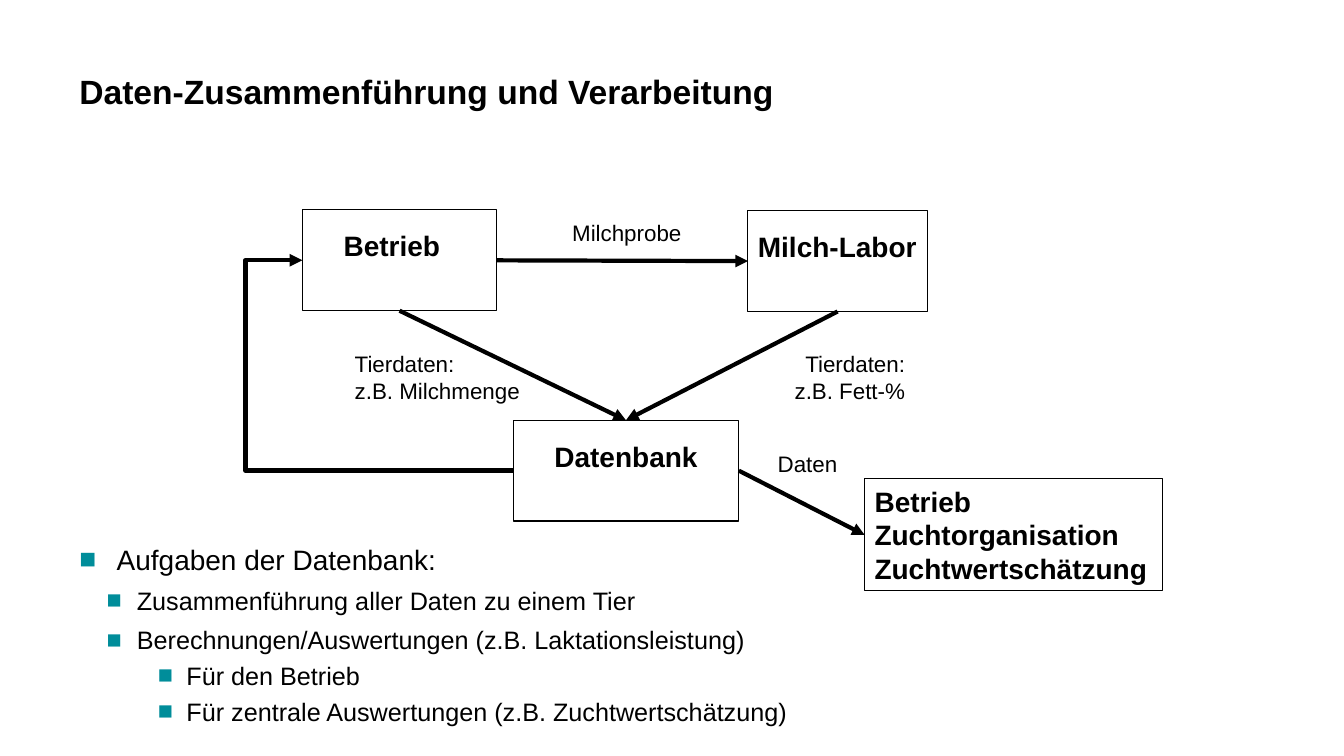
from lxml.etree import SubElement
from pptx import Presentation
from pptx.dml.color import RGBColor
from pptx.enum.shapes import MSO_CONNECTOR as Route, MSO_SHAPE as Shape
from pptx.enum.text import MSO_ANCHOR as Anchor, PP_ALIGN as Align
from pptx.oxml.ns import qn
from pptx.util import Cm, Pt

BLACK = RGBColor(0x00, 0x00, 0x00)
TEAL = RGBColor(0x00, 0x8D, 0x9A)
FONT = "Arial"
TOP, LEFT, BOTTOM, RIGHT = range(4)
BULLET_LEVELS = [
    (0.94, -0.94, 20, 0),
    (1.45, -0.76, 18, 6.5),
    (2.7, -0.72, 18, 4),
]


def style_font(paragraph, size, bold=False):
    font = paragraph.font
    font.name, font.size, font.bold = FONT, Pt(size), bold
    font.color.rgb = BLACK


def write_lines(frame, lines, size, bold=False, align=Align.LEFT):
    frame.text = "\n".join(lines)
    for paragraph in frame.paragraphs:
        paragraph.alignment = align
        style_font(paragraph, size, bold)


def add_station(slide, lines, x, y, width, height=2.54, inset_left=0.25, inset_top=0.48):
    station = slide.shapes.add_shape(Shape.RECTANGLE, Cm(x), Cm(y), Cm(width), Cm(height))
    station.shadow.inherit = False
    station.fill.background()
    station.line.color.rgb = BLACK
    station.line.width = Pt(0.75)
    frame = station.text_frame
    frame.word_wrap = True
    frame.vertical_anchor = Anchor.TOP
    frame.margin_left, frame.margin_right = Cm(inset_left), 0
    frame.margin_top = Cm(inset_top)
    write_lines(frame, lines, 20, bold=True)
    return station


def add_label(slide, lines, x, y, width, height=0.94, align=Align.LEFT):
    label = slide.shapes.add_textbox(Cm(x), Cm(y), Cm(width), Cm(height))
    label.text_frame.word_wrap = False
    write_lines(label.text_frame, lines, 16, align=align)


def add_flow(slide, source, source_side, target, target_side, route=Route.STRAIGHT):
    flow = slide.shapes.add_connector(route, 0, 0, 0, 0)
    flow.begin_connect(source, source_side)
    flow.end_connect(target, target_side)
    flow.line.color.rgb = BLACK
    flow.line.width = Pt(3)
    SubElement(flow.line._get_or_add_ln(), qn("a:tailEnd"), type="triangle")
    properties = flow._element.spPr
    SubElement(properties, qn("a:effectLst"))
    return flow


def bend_outwards(flow, ratio):
    geometry = flow._element.spPr.find(qn("a:prstGeom"))
    guides = geometry.find(qn("a:avLst"))
    if guides is None:
        guides = SubElement(geometry, qn("a:avLst"))
    SubElement(guides, qn("a:gd"), name="adj1", fmla=f"val {round(ratio * 100000)}")


def add_bullet(paragraph, indent, hanging):
    properties = paragraph._p.get_or_add_pPr()
    properties.set("marL", str(Cm(indent)))
    properties.set("indent", str(Cm(hanging)))
    colour = SubElement(properties, qn("a:buClr"))
    SubElement(colour, qn("a:srgbClr"), val=str(TEAL))
    SubElement(properties, qn("a:buFont"), typeface=FONT)
    SubElement(properties, qn("a:buChar"), char="■")


def add_tasks(slide, tasks):
    frame = slide.shapes.add_textbox(Cm(1.75), Cm(13.54), Cm(25.35), Cm(4.65)).text_frame
    frame.word_wrap = True
    frame.text = "\n".join(task for _, task in tasks)
    for paragraph, (level, _) in zip(frame.paragraphs, tasks):
        indent, hanging, size, space = BULLET_LEVELS[level]
        paragraph.level = level
        paragraph.space_before = Pt(space)
        add_bullet(paragraph, indent, hanging)
        style_font(paragraph, size)


def add_title(slide, title):
    frame = slide.shapes.add_textbox(Cm(1.75), Cm(1.6), Cm(23.19), Cm(1.4)).text_frame
    frame.word_wrap = True
    frame.vertical_anchor = Anchor.MIDDLE
    write_lines(frame, [title], 24, bold=True)


def main():
    presentation = Presentation()
    presentation.slide_width, presentation.slide_height = Cm(33.87), Cm(19.05)
    slide = presentation.slides.add_slide(presentation.slide_layouts[6])

    add_title(slide, "Daten-Zusammenführung und Verarbeitung")
    add_tasks(slide, [
        (0, "Aufgaben der Datenbank:"),
        (1, "Zusammenführung aller Daten zu einem Tier"),
        (1, "Berechnungen/Auswertungen (z.B. Laktationsleistung)"),
        (2, "Für den Betrieb"),
        (2, "Für zentrale Auswertungen (z.B. Zuchtwertschätzung)"),
    ])

    farm = add_station(slide, ["Betrieb"], 7.62, 5.29, 4.9, inset_left=1.04)
    laboratory = add_station(slide, ["Milch-Labor"], 18.85, 5.31, 4.52)
    database = add_station(slide, ["Datenbank"], 12.93, 10.59, 5.69, inset_left=1.04)
    recipients = add_station(
        slide, ["Betrieb", "Zuchtorganisation", "Zuchtwertschätzung"],
        21.79, 12.07, 7.52, 2.82, inset_top=0.13)

    add_flow(slide, farm, RIGHT, laboratory, LEFT)
    add_flow(slide, farm, BOTTOM, database, TOP)
    add_flow(slide, laboratory, BOTTOM, database, TOP)
    add_flow(slide, database, RIGHT, recipients, LEFT)
    feedback = add_flow(slide, database, LEFT, farm, LEFT, Route.ELBOW)
    bend_outwards(feedback, 1.27)

    add_label(slide, ["Milchprobe"], 14.17, 5.41, 3.28)
    add_label(slide, ["Tierdaten:", "z.B. Milchmenge"], 8.69, 8.69, 4.67, 1.63)
    add_label(slide, ["Tierdaten:", "z.B. Fett-%"], 19.76, 8.69, 3.3, 1.63, Align.RIGHT)
    add_label(slide, ["Daten"], 19.35, 11.23, 2.01)

    presentation.save("out.pptx")


if __name__ == "__main__":
    main()
